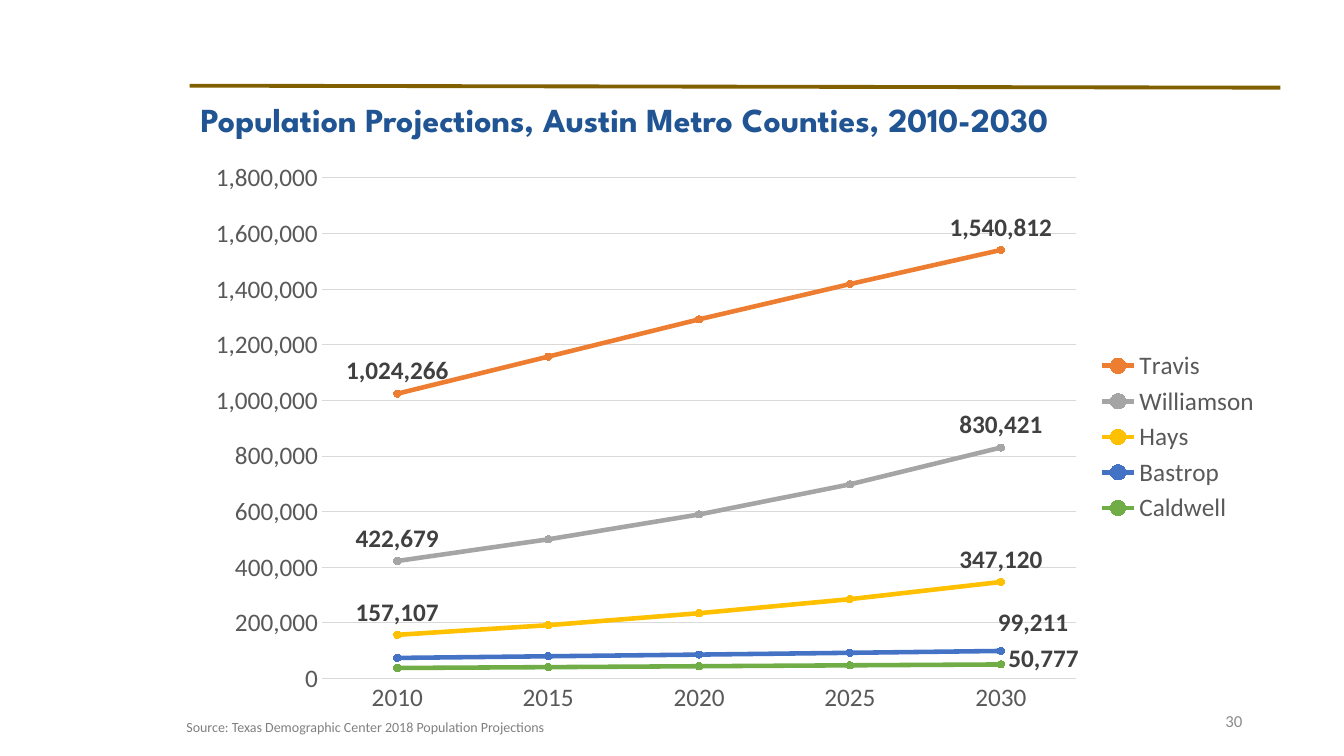
from lxml import etree
from pptx import Presentation
from pptx import util as u
from pptx.chart.data import CategoryChartData
from pptx.dml.color import RGBColor
from pptx.enum import chart as c, shapes, text
from pptx.oxml.ns import qn

TITLE = "Population Projections, Austin Metro Counties, 2010-2030"
SOURCE = "Source: Texas Demographic Center 2018 Population Projections"
PAGE = "30"
YEARS = ["2010", "2015", "2020", "2025", "2030"]
COUNTIES = [
    ("Travis", "ED7D31", (1024266, 1157447, 1291502, 1418330, 1540812)),
    ("Williamson", "A5A5A5", (422679, 500485, 589914, 698082, 830421)),
    ("Hays", "FFC000", (157107, 191851, 234896, 285370, 347120)),
    ("Bastrop", "4472C4", (74171, 80082, 86105, 92519, 99211)),
    ("Caldwell", "70AD47", (38066, 41044, 44284, 47589, 50777)),
]
LAST = len(YEARS) - 1
HIDDEN_LABELS = {"Bastrop": range(LAST), "Caldwell": range(LAST)}
MOVED_LABELS = {
    "Bastrop": (c.XL_LABEL_POSITION.ABOVE, 0.03, -0.01),
    "Caldwell": (c.XL_LABEL_POSITION.RIGHT, 0, -0.01),
}
PLOT_SHARES = {"x": 0.12, "y": 0.05, "w": 0.7, "h": 0.87}
WIDTH, HEIGHT = 13.33, 7.5


def color(value):
    return RGBColor.from_string(value)


def style(font, size, value, name="Calibri", bold=False):
    font.size, font.name, font.bold = u.Pt(size), name, bold
    font.color.rgb = color(value)


def place(shape, left, top, width, height):
    shape.left, shape.top = u.Inches(left), u.Inches(top)
    shape.width, shape.height = u.Inches(width), u.Inches(height)


def write(shape, words, anchor, align, **look):
    frame = shape.text_frame
    frame.word_wrap = True
    frame.auto_size = text.MSO_AUTO_SIZE.NONE
    frame.vertical_anchor = anchor
    paragraph = frame.paragraphs[0]
    paragraph.alignment = align
    run = paragraph.add_run()
    run.text = words
    style(run.font, **look)
    return paragraph


def child(parent, tag, value=None):
    element = etree.SubElement(parent, qn("c:" + tag))
    if value is not None:
        element.set("val", str(value))
    return element


def manual_layout(layout, shares, inner=False):
    manual = child(layout, "manualLayout")
    if inner:
        child(manual, "layoutTarget", "inner")
        child(manual, "xMode", "edge")
        child(manual, "yMode", "edge")
    for tag, share in shares.items():
        child(manual, tag, share)


def style_labels(series):
    labels = series.data_labels
    labels.show_value = True
    labels.position = c.XL_LABEL_POSITION.ABOVE
    style(labels.font, 18, "404040", bold=True)
    if series.name in MOVED_LABELS:
        position, x, y = MOVED_LABELS[series.name]
        label = series.points[LAST].data_label
        style(label.font, 18, "404040", bold=True)
        label.position = position
        layout = etree.Element(qn("c:layout"))
        manual_layout(layout, {"x": x, "y": y})
        series._element.find(".//" + qn("c:dLbl")).insert(1, layout)
    dlbls = series._element.find(qn("c:dLbls"))
    for order, index in enumerate(HIDDEN_LABELS.get(series.name, range(1, LAST))):
        hidden = etree.Element(qn("c:dLbl"))
        child(hidden, "idx", index)
        child(hidden, "delete", 1)
        dlbls.insert(order, hidden)


def style_axis(axis):
    axis.major_tick_mark = axis.minor_tick_mark = c.XL_TICK_MARK.NONE
    style(axis.tick_labels.font, 18, "595959")


def add_population_chart(slide):
    data = CategoryChartData(number_format="#,##0")
    data.categories = YEARS
    for name, _, values in COUNTIES:
        data.add_series(name, values)
    box = [u.Inches(n) for n in (1.91, 1.48, 10.69, 5.71)]
    chart = slide.shapes.add_chart(c.XL_CHART_TYPE.LINE_MARKERS, *box, data).chart
    style(chart.font, 18, "000000")
    chart.has_title = False
    chart.has_legend = True
    chart.legend.position = c.XL_LEGEND_POSITION.RIGHT
    chart.legend.include_in_layout = False
    style(chart.legend.font, 18, "595959")

    years, people = chart.category_axis, chart.value_axis
    style_axis(years)
    style_axis(people)
    people.minimum_scale, people.maximum_scale, people.major_unit = 0, 1800000, 200000
    people.tick_labels.number_format = "#,##0"
    people.tick_labels.number_format_is_linked = False
    people.format.line.fill.background()
    people.has_major_gridlines = True
    for line in (years.format.line, people.major_gridlines.format.line):
        line.color.rgb = color("D9D9D9")
        line.width = u.Pt(0.75)

    plot = chart.plots[0]
    plot.vary_by_categories = False
    for series, (_, shade, _) in zip(plot.series, COUNTIES):
        series.smooth = False
        series.format.line.color.rgb = color(shade)
        series.format.line.width = u.Pt(3.25)
        series.marker.style = c.XL_MARKER_STYLE.CIRCLE
        series.marker.size = 5
        series.marker.format.fill.solid()
        series.marker.format.fill.fore_color.rgb = color(shade)
        series.marker.format.line.color.rgb = color(shade)
        style_labels(series)

    area = chart._chartSpace.chart.plotArea
    layout = area.find(qn("c:layout"))
    if layout is None:
        layout = etree.Element(qn("c:layout"))
        area.insert(0, layout)
    manual_layout(layout, PLOT_SHARES, inner=True)


def main():
    presentation = Presentation()
    presentation.slide_width, presentation.slide_height = u.Inches(WIDTH), u.Inches(HEIGHT)
    slide = presentation.slides.add_slide(presentation.slide_layouts[5])

    ends = [u.Inches(n) for n in (1.88, 0.85, 12.7, 0.87)]
    rule = slide.shapes.add_connector(shapes.MSO_CONNECTOR.STRAIGHT, *ends)
    rule.line.color.rgb = color("806000")
    rule.line.width = u.Pt(2.75)
    etree.SubElement(rule._element.spPr, qn("a:effectLst"))

    add_population_chart(slide)

    title = slide.shapes.title
    place(title, 1.89, 0.98, 10.82, 0.5)
    heading = write(title, TITLE, text.MSO_ANCHOR.TOP, text.PP_ALIGN.LEFT,
                    size=24, value="205493", name="League Spartan", bold=True)
    heading.line_spacing = 0.9

    source = slide.shapes.add_textbox(0, 0, 0, 0)
    place(source, 1.75, 7.08, 9.58, 0.27)
    write(source, SOURCE, text.MSO_ANCHOR.TOP, text.PP_ALIGN.LEFT, size=10, value="808080")

    number = slide.shapes.add_textbox(0, 0, 0, 0)
    place(number, 9.42, 6.95, 3, 0.4)
    write(number, PAGE, text.MSO_ANCHOR.MIDDLE, text.PP_ALIGN.RIGHT, size=12, value="8C8C8C")

    presentation.save("out.pptx")


if __name__ == "__main__":
    main()
